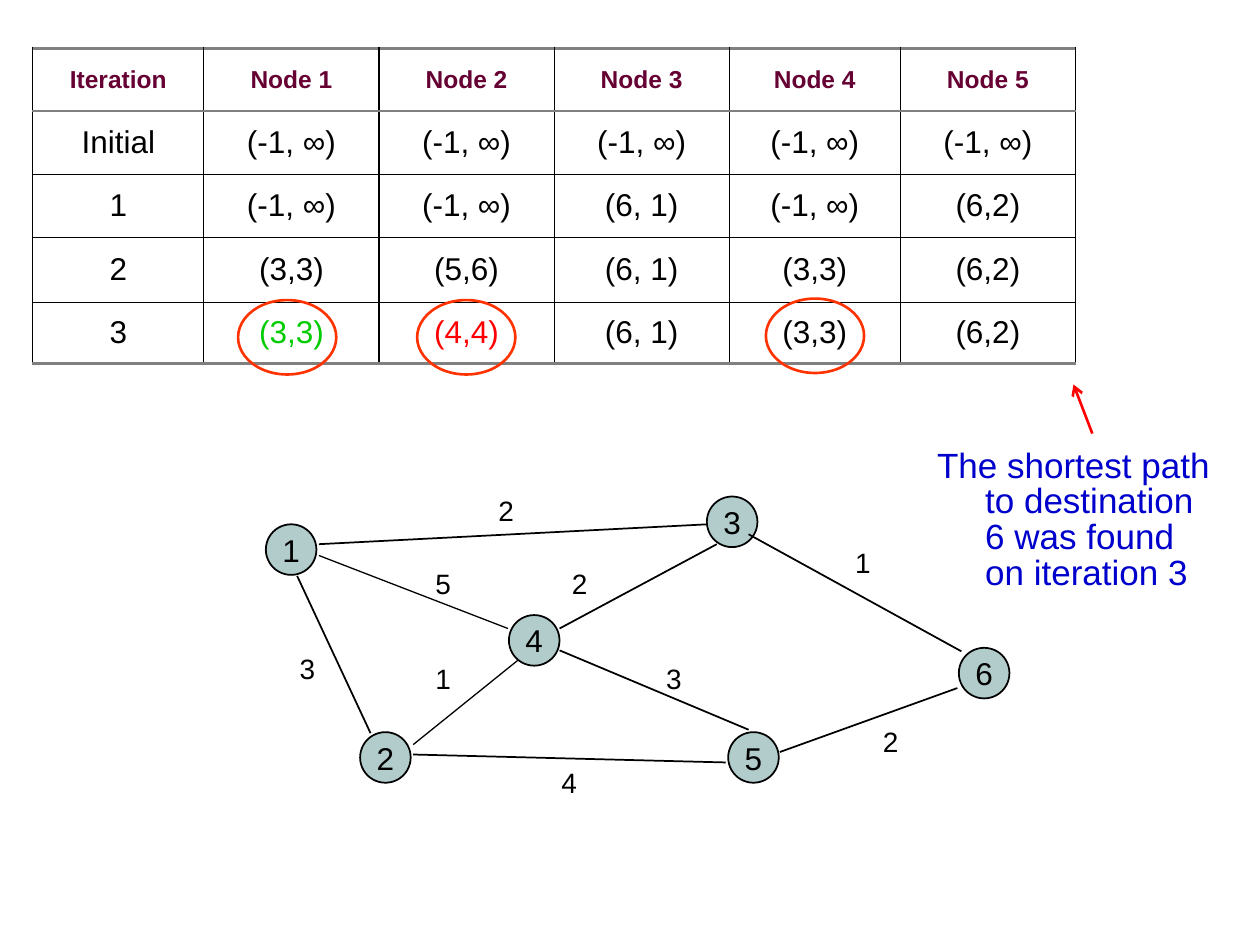
from lxml import etree
from pptx import Presentation
from pptx.dml.color import RGBColor
from pptx.enum.shapes import MSO_CONNECTOR, MSO_SHAPE
from pptx.enum.text import MSO_ANCHOR, PP_ALIGN
from pptx.oxml.ns import qn
from pptx.util import Cm, Pt

LINE = MSO_CONNECTOR.STRAIGHT
OVAL = MSO_SHAPE.OVAL
MIDDLE = MSO_ANCHOR.MIDDLE
CENTER = PP_ALIGN.CENTER

HUES = {
    "ink": "000000", "head": "660033", "rule": "808080", "node": "B1CCCB",
    "ring": "FF3300", "green": "00CC00", "red": "FF0000", "note": "0000CC",
}
HEAD = {"size": Pt(14), "bold": True}
BODY = {"size": Pt(18), "bold": False}
LABEL = {"size": Pt(16)}
NOTE = {"size": Pt(20)}

# Table: column widths, row heights, text
COLS = [3.45, 3.53, 3.53, 3.53, 3.45, 3.53]
ROWS = [1.27, 1.27, 1.27, 1.32, 1.22]
NONE = "(-1, ∞)"
CELLS = [
    ["Iteration"] + [f"Node {n}" for n in range(1, 6)],
    ["Initial"] + [NONE] * 5,
    ["1", NONE, NONE, "(6, 1)", NONE, "(6,2)"],
    ["2", "(3,3)", "(5,6)", "(6, 1)", "(3,3)", "(6,2)"],
    ["3", "(3,3)", "(4,4)", "(6, 1)", "(3,3)", "(6,2)"],
]
MARKS = {(4, 1): "green", (4, 2): "red"}
RINGS = [(4.14, 5.08), (7.75, 5.08), (14.78, 5.05)]

# Graph: node corners, then edges as start, end, weight, label corner, width
NODES = {
    "1": (0.36, 1.07), "2": (2.26, 5.26), "3": (9.25, 0.51),
    "4": (5.26, 2.9), "5": (9.68, 5.26), "6": (14.33, 3.56),
}
EDGES = [
    ((1.43, 1.47), (9.25, 1.07), "2", (4.8, 0.43), 1),
    ((0.99, 2.11), (2.47, 5.28), "3", (0.79, 3.61), 1),
    ((3.33, 5.71), (9.63, 5.87), "4", (6.07, 5.92), 1),
    ((10.72, 5.66), (14.3, 4.37), "2", (12.55, 5.08), 1),
    ((10.09, 1.27), (14.38, 3.63), "1", (11.99, 1.47), 1),
    ((9.45, 1.47), (6.28, 3.17), "2", (6.28, 1.9), 1),
    ((6.28, 3.61), (10.09, 5.21), "3", (8.18, 3.81), 1),
    ((3.33, 5.51), (5.44, 3.81), "1", (3.53, 3.81), 0.75),
    ((1.43, 1.7), (5.24, 3.17), "5", (3.53, 1.9), 0.75),
]


def rgb(hue):
    return RGBColor.from_string(HUES[hue])


def write(frame, text, form, hue="ink"):
    """Put one run of text in a frame and return its paragraph."""
    para = frame.paragraphs[0]
    run = para.add_run()
    run.text = text
    for key, val in {"name": "Arial", **form}.items():
        setattr(run.font, key, val)
    run.font.color.rgb = rgb(hue)
    return para


def add_oval(slide, x, y, w, h, hue, width, fill=None):
    oval = slide.shapes.add_shape(OVAL, Cm(x), Cm(y), Cm(w), Cm(h))
    oval.shadow.inherit = False
    if fill:
        oval.fill.solid()
        oval.fill.fore_color.rgb = rgb(fill)
    else:
        oval.fill.background()
    oval.line.color.rgb = rgb(hue)
    oval.line.width = Pt(width)
    return oval


def add_line(slide, box, start, end, hue, width):
    ends = [Cm(o + d) for point in (start, end) for o, d in zip(box, point)]
    line = slide.shapes.add_connector(LINE, *ends)
    line.line.color.rgb = rgb(hue)
    line.line.width = Pt(width)
    etree.SubElement(line._element.spPr, qn("a:effectLst"))
    return line


def add_text(slide, x, y, w, h, text, form, hue, wrap):
    area = slide.shapes.add_textbox(Cm(x), Cm(y), Cm(w), Cm(h))
    area.text_frame.word_wrap = wrap
    para = write(area.text_frame, text, form, hue)
    para.line_spacing = 0.85
    return para


def set_edge(cell, side, hue, width):
    edge = etree.SubElement(cell._tc.get_or_add_tcPr(), qn(f"a:ln{side}"),
                            w=str(Pt(width)))
    fill = etree.SubElement(edge, qn("a:solidFill"))
    etree.SubElement(fill, qn("a:srgbClr"), val=HUES[hue])


def draw_table(slide, box):
    x, y = box
    grid = slide.shapes.add_table(len(ROWS), len(COLS), Cm(x), Cm(y),
                                  Cm(sum(COLS)), Cm(sum(ROWS))).table
    grid.first_row = grid.horz_banding = False
    for col, width in zip(grid.columns, COLS):
        col.width = Cm(width)
    for row, height in zip(grid.rows, ROWS):
        row.height = Cm(height)

    # Horizontal rules from top to bottom
    thin, thick = ("ink", 0.75), ("rule", 2)
    rules = [thick, ("rule", 1), thin, thin, thin, thick]
    for r, words in enumerate(CELLS):
        for c, word in enumerate(words):
            cell = grid.cell(r, c)
            cell.vertical_anchor = MIDDLE
            form, hue = (BODY, "ink") if r else (HEAD, "head")
            para = write(cell.text_frame, word, form, MARKS.get((r, c), hue))
            para.alignment = CENTER
            for side, rule in zip("LRTB", (thin, thin, rules[r], rules[r + 1])):
                set_edge(cell, side, *rule)
            cell.fill.background()

    # Rings around the last results
    for dx, dy in RINGS:
        add_oval(slide, x + dx, y + dy, 1.98, 1.5, "ring", 1.5)


def draw_graph(slide, box):
    x, y = box
    for name, (dx, dy) in NODES.items():
        node = add_oval(slide, x + dx, y + dy, 1.02, 1.02, "ink", 1, "node")
        frame = node.text_frame
        form = {"margin_left": 0, "margin_right": 0, "margin_top": 0,
                "margin_bottom": 0, "word_wrap": False,
                "vertical_anchor": MIDDLE}
        for key, val in form.items():
            setattr(frame, key, val)
        write(frame, name, BODY).alignment = CENTER
    for start, end, weight, (dx, dy), width in EDGES:
        add_line(slide, box, start, end, "ink", width)
        add_text(slide, x + dx, y + dy, 0.82, 0.82, weight, LABEL, "ink", False)


def draw_note(slide, box):
    text = "The shortest path to destination 6 was found on iteration 3"
    para = add_text(slide, *box, 6.15, 3.15, text, NOTE, "note", True)
    # Hanging indent
    props = para._p.get_or_add_pPr()
    props.set("marL", str(Cm(0.97)))
    props.set("indent", str(-Cm(0.97)))
    # Arrow up to the table
    arrow = add_line(slide, box, (3.38, -0.2), (3, -1.19), "red", 1.5)
    etree.SubElement(arrow.line._get_or_add_ln(), qn("a:tailEnd"), type="arrow")


def main():
    deck = Presentation()
    deck.slide_width, deck.slide_height = Cm(25.4), Cm(19.05)
    slide = deck.slides.add_slide(deck.slide_layouts[6])
    draw_table(slide, (0.66, 0.97))
    draw_graph(slide, (5, 9.5))
    draw_note(slide, (18.64, 8.94))
    deck.save("out.pptx")


if __name__ == "__main__":
    main()
